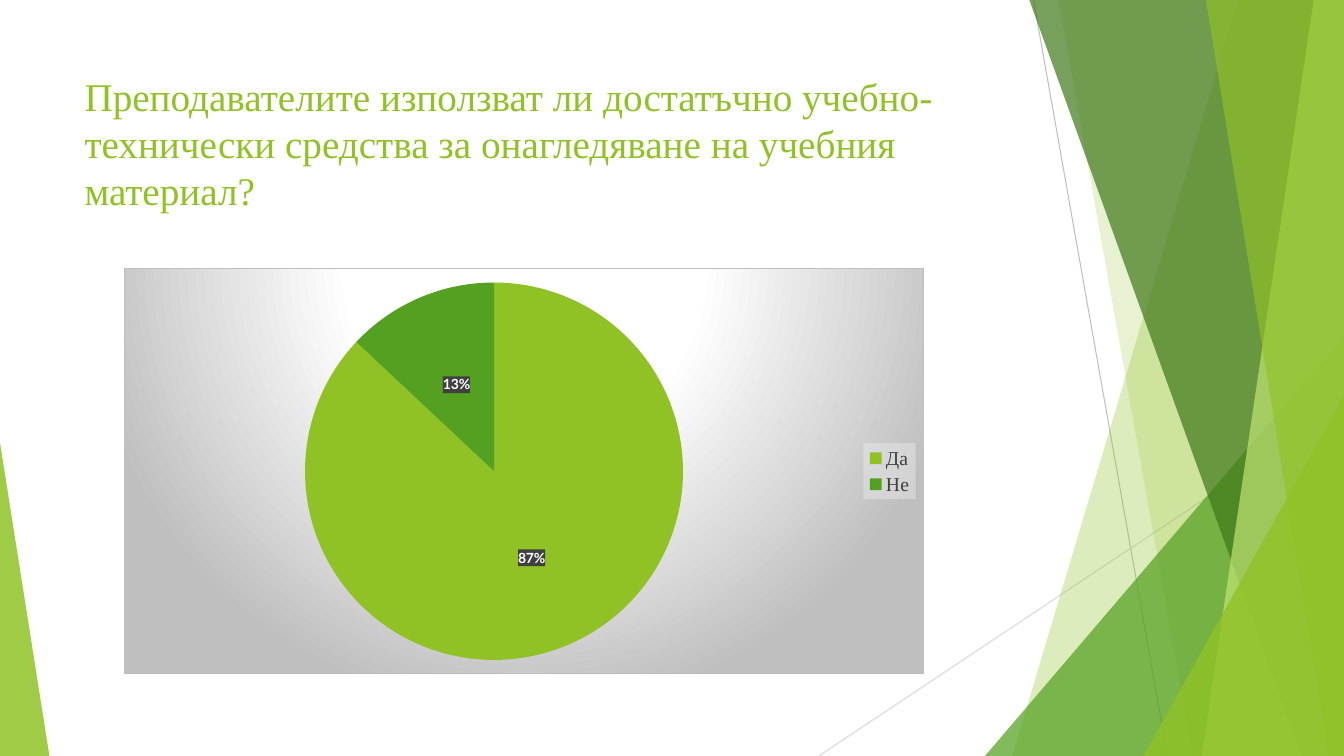
from lxml import etree
from pptx import Presentation, util as u
from pptx.chart.data import CategoryChartData
from pptx.dml.color import RGBColor
from pptx.enum import chart as ch, shapes as sh, text as tx
from pptx.oxml import parse_xml
from pptx.oxml.ns import nsdecls, qn

WIDE, HIGH = u.Inches(13.33), u.Inches(7.5)
LIME, GREEN, GRAY = "90C226", "54A021", "BFBFBF"
SERIF = "Times New Roman"


def color(code):
    return RGBColor.from_string(code)


def across(share):
    return round(WIDE * share / 100)


def down(share):
    return round(HIGH * share / 100)


def box(left, top, width, height):
    return across(left), down(top), across(width), down(height)


def style(font, face, size, code, bold=False):
    font.name, font.size, font.bold = face, u.Pt(size), bold
    font.color.rgb = color(code)


def paint(shape, code, alpha):
    shape.shadow.inherit = False
    shape.line.fill.background()
    shape.fill.solid()
    shape.fill.fore_color.rgb = color(code)
    tint = shape.fill._xPr.find(".//" + qn("a:srgbClr"))
    etree.SubElement(tint, qn("a:alpha")).set("val", str(alpha * 1000))


def add_line(slide, start, end, code):
    line = slide.shapes.add_connector(
        sh.MSO_CONNECTOR.STRAIGHT, across(start[0]), down(start[1]),
        across(end[0]), down(end[1]))
    line.line.color.rgb = color(code)
    line.line.width = u.Pt(0.75)
    etree.SubElement(line._element.spPr, qn("a:effectLst"))


def add_panel(slide, top, base, code, alpha):
    form = slide.shapes.build_freeform(across(top), 0)
    form.add_line_segments(
        [(WIDE, 0), (WIDE, HIGH), (across(base), HIGH)], close=True)
    paint(form.convert_to_shape(), code, alpha)


def add_wedge(slide, left, top, width, peak, code, alpha):
    wedge = slide.shapes.add_shape(
        sh.MSO_SHAPE.ISOSCELES_TRIANGLE, *box(left, top, width, 100 - top))
    wedge.adjustments[0] = peak
    paint(wedge, code, alpha)


def add_title(slide, words):
    frame = slide.shapes.add_textbox(*box(5.55, 8.93, 70.52, 19.2)).text_frame
    frame.word_wrap = True
    frame.vertical_anchor = tx.MSO_ANCHOR.TOP
    frame.text = words
    style(frame.paragraphs[0].runs[0].font, SERIF, 28, LIME)


def tint_box(code, alpha):
    return parse_xml(
        f'<c:spPr {nsdecls("c", "a")}><a:solidFill><a:srgbClr val="{code}">'
        f'<a:alpha val="{alpha * 1000}"/></a:srgbClr></a:solidFill></c:spPr>')


def back_fill():
    stops = "".join(
        f'<a:gs pos="{place * 1000}"><a:srgbClr val="{code}"/></a:gs>'
        for place, code in ((0, "FFFFFF"), (39, "FFFFFF"), (100, GRAY)))
    return parse_xml(
        f'<c:spPr {nsdecls("c", "a")}><a:gradFill><a:gsLst>{stops}</a:gsLst>'
        '<a:path path="circle"><a:fillToRect l="50000" t="-80000" r="50000" '
        'b="180000"/></a:path></a:gradFill><a:ln w="9525"><a:solidFill>'
        f'<a:srgbClr val="{GRAY}"/></a:solidFill></a:ln></c:spPr>')


def add_pie(slide, names, values, codes):
    data = CategoryChartData()
    data.categories = names
    data.add_series("Series 1", values)
    chart = slide.shapes.add_chart(
        ch.XL_CHART_TYPE.PIE, *box(9.23, 35.47, 59.56, 53.73), data).chart
    chart.has_title = False
    style(chart.font, "Lato", 10, "000000")
    chart._chartSpace.find(qn("c:chart")).addnext(back_fill())

    chart.has_legend = True
    legend = chart.legend
    legend.position = ch.XL_LEGEND_POSITION.RIGHT
    legend.include_in_layout = False
    style(legend.font, SERIF, 14, "404040")
    legend._element.find(qn("c:txPr")).addprevious(tint_box("F2F2F2", 39))

    plot = chart.plots[0]
    plot.vary_by_categories = True
    for index, code in enumerate(codes):
        fill = plot.series[0].points[index].format.fill
        fill.solid()
        fill.fore_color.rgb = color(code)
    labels = plot.series[0].data_labels
    labels.show_value = False
    labels.show_percentage = True
    labels.number_format = "0%"
    labels.number_format_is_linked = False
    labels.position = ch.XL_LABEL_POSITION.CENTER
    style(labels.font, "Lato", 10, "FFFFFF", True)
    labels._element.find(qn("c:txPr")).addprevious(tint_box("404040", 90))


def main():
    deck = Presentation()
    deck.slide_width, deck.slide_height = WIDE, HIGH
    slide = deck.slides.add_slide(deck.slide_layouts[6])
    add_line(slide, (76.9, 0), (86.87, 100), GRAY)
    add_line(slide, (100, 53.73), (60.92, 100), "D9D9D9")
    add_panel(slide, 92.12, 75.32, LIME, 30)
    add_panel(slide, 78.77, 88.75, LIME, 20)
    add_wedge(slide, 73.29, 44.4, 26.71, 1, GREEN, 72)
    add_panel(slide, 76.59, 96.85, "3F7819", 70)
    add_panel(slide, 97.75, 89.42, "C0E474", 70)
    add_panel(slide, 89.72, 98.87, LIME, 65)
    add_wedge(slide, 85.07, 52.4, 14.93, 1, LIME, 80)
    add_wedge(slide, 0, 58.53, 3.68, 0, LIME, 85)
    add_title(slide, "Преподавателите използват ли достатъчно учебно- "
              "технически средства за онагледяване на учебния материал?")
    add_pie(slide, ("Да", "Не"), (87, 13), (LIME, GREEN))
    deck.save("out.pptx")


if __name__ == "__main__":
    main()
